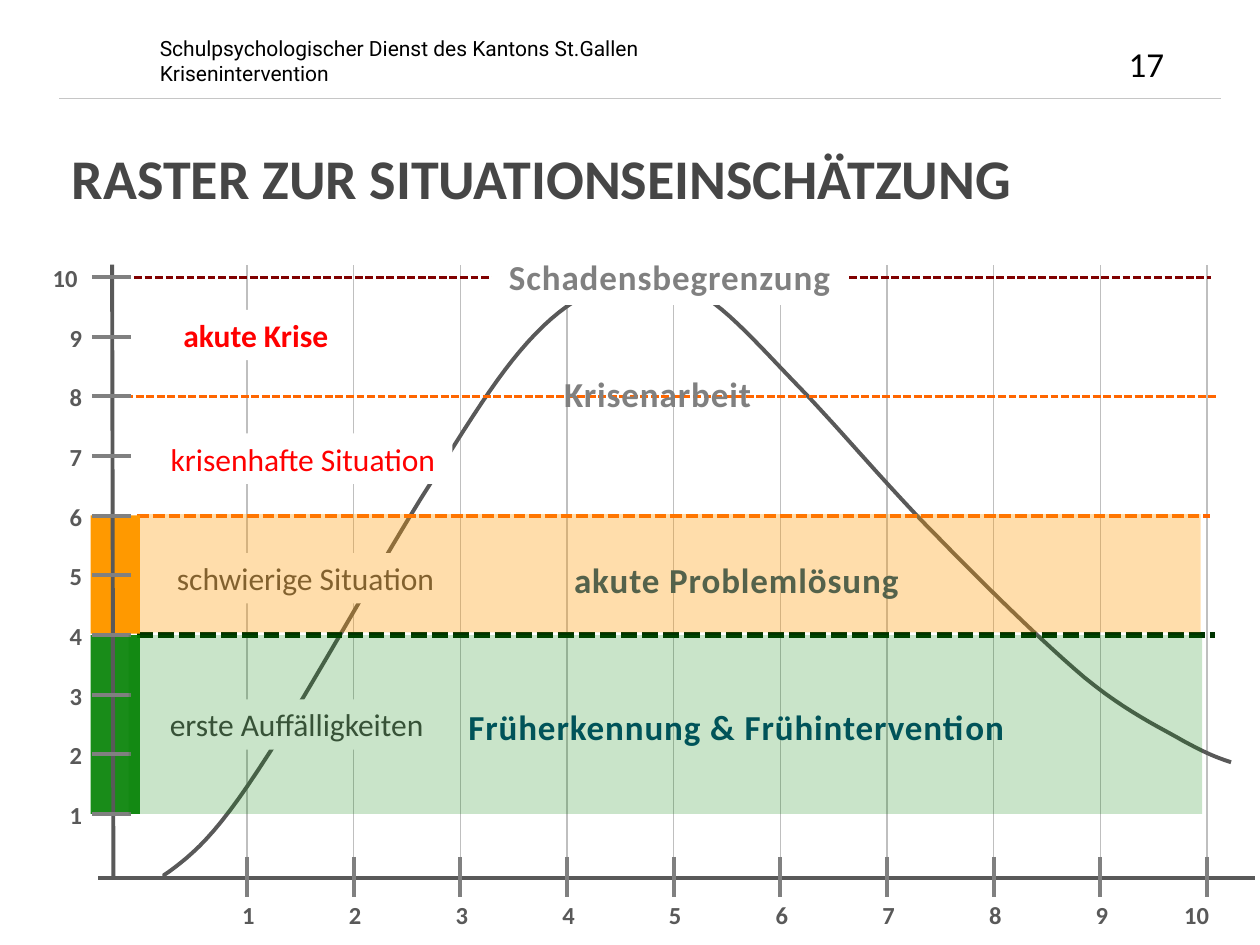
from dataclasses import dataclass

from lxml import etree
from pptx import Presentation
from pptx.dml.color import RGBColor
from pptx.enum.dml import MSO_LINE
from pptx.enum.shapes import MSO_CONNECTOR, MSO_SHAPE
from pptx.enum.text import MSO_ANCHOR, MSO_AUTO_SIZE, PP_ALIGN
from pptx.oxml.ns import qn
from pptx.util import Inches, Pt

STRAIGHT = MSO_CONNECTOR.STRAIGHT
RECTANGLE = MSO_SHAPE.RECTANGLE
DASH = MSO_LINE.SQUARE_DOT
LEFT, CENTER, RIGHT = PP_ALIGN.LEFT, PP_ALIGN.CENTER, PP_ALIGN.RIGHT
TOP = MSO_ANCHOR.TOP
FIXED = MSO_AUTO_SIZE.NONE


@dataclass(frozen=True)
class Theme:
    font: str = "Calibri"
    header_font: str = "Roboto"
    title_size: int = 32
    phase_size: int = 20
    situation_size: int = 18
    axis_size: int = 14
    header_size: int = 12
    black: str = "000000"
    white: str = "FFFFFF"
    rule: str = "111111"
    text: str = "464646"
    axis: str = "595959"
    tick: str = "808080"
    grid: str = "BFBFBF"
    red: str = "FF0000"
    dark_red: str = "800000"
    orange: str = "FF9900"
    deep_orange: str = "FF6600"
    green: str = "008000"
    dark_green: str = "003300"
    blue: str = "004771"


THEME = Theme()


@dataclass(frozen=True)
class Box:
    left: float
    top: float
    width: float
    height: float

    def inner(self, left, top, width, height):
        return Box(self.left + left, self.top + top, width, height)

    def lengths(self):
        return [Inches(v) for v in (self.left, self.top, self.width, self.height)]


class Plot(Box):
    """Chart area whose two scales both run from 1 to 10."""

    def x(self, value):
        return self.left + 1.06 + (value - 1) * 7.62 / 9

    def y(self, value):
        return self.top + 0.1 + (10 - value) * 4.26 / 9


# Start point, then two control points and an end point for each arc
CURVE = [
    (0.02, 4.83),
    (0.14, 4.89), (0.25, 4.96), (0.44, 4.82),
    (0.63, 4.68), (0.81, 4.53), (1.15, 4.01),
    (1.5, 3.49), (2.17, 2.27), (2.54, 1.7),
    (2.9, 1.12), (3.1, 0.81), (3.35, 0.55),
    (3.6, 0.29), (3.83, 0.18), (4.04, 0.12),
    (4.26, 0.07), (4.42, 0.08), (4.65, 0.23),
    (4.89, 0.37), (5.13, 0.65), (5.45, 0.98),
    (5.76, 1.3), (6.17, 1.79), (6.55, 2.17),
    (6.93, 2.56), (7.39, 3.01), (7.71, 3.28),
    (8.04, 3.55), (8.3, 3.67), (8.49, 3.78),
    (8.69, 3.89), (8.78, 3.92), (8.87, 3.95),
]


def set_alpha(fill_parent, percent):
    color = next(fill_parent.iter(qn("a:srgbClr")))
    etree.SubElement(color, qn("a:alpha")).set("val", str(percent * 1000))


def add_line(page, x1, y1, x2, y2, color, width, dash=None):
    line = page.shapes.add_connector(STRAIGHT, Inches(x1), Inches(y1), Inches(x2), Inches(y2))
    line.line.color.rgb = RGBColor.from_string(color)
    line.line.width = Pt(width)
    if dash:
        line.line.dash_style = dash
    etree.SubElement(line._element.spPr, qn("a:effectLst"))
    return line


def add_rect(page, box, color, alpha=100):
    rect = page.shapes.add_shape(RECTANGLE, *box.lengths())
    rect.shadow.inherit = False
    rect.fill.solid()
    rect.fill.fore_color.rgb = RGBColor.from_string(color)
    rect.line.fill.background()
    if alpha < 100:
        set_alpha(rect._element.spPr, alpha)
    return rect


def write(shape, lines, size, color, bold=False, align=LEFT, font=THEME.font, spacing=0):
    frame = shape.text_frame
    frame.word_wrap = True
    frame.auto_size = FIXED
    frame.vertical_anchor = TOP
    for index, text in enumerate(lines):
        para = frame.add_paragraph() if index else frame.paragraphs[0]
        para.alignment = align
        span = para.add_run()
        span.text = text
        span.font.name = font
        span.font.size = Pt(size)
        span.font.bold = bold
        span.font.color.rgb = RGBColor.from_string(color)
        if spacing:
            span.font._element.set("spc", str(spacing))


def add_text(page, box, *args, **style):
    write(page.shapes.add_textbox(*box.lengths()), *args, **style)


def draw_header(page, box):
    bottom = box.top + box.height
    rule = add_line(page, box.left, bottom, box.left + box.width, bottom, THEME.rule, 0.25)
    set_alpha(rule._element.spPr, 68)
    add_text(page, box.inner(0.7, 0, 7.6, 0.5),
             ["Schulpsychologischer Dienst des Kantons St.Gallen", "Krisenintervention"],
             THEME.header_size, THEME.black, font=THEME.header_font)
    add_text(page, box.inner(8.39, 0.06, 0.79, 0.44), ["17"], THEME.phase_size, THEME.black)


def draw_title(page, box):
    title = page.shapes.title
    title.left, title.top, title.width, title.height = box.lengths()
    write(title, ["RASTER ZUR SITUATIONSEINSCHÄTZUNG"], THEME.title_size, THEME.text, bold=True)


def draw_grid(page, plot):
    for value in range(1, 11):
        add_line(page, plot.x(value), plot.top + 4.88, plot.x(value), plot.top, THEME.grid, 0.75)


def draw_curve(page, plot, steps=12):
    points = []
    for i in range(0, len(CURVE) - 1, 3):
        arc = CURVE[i:i + 4]
        for step in range(1, steps + 1):
            t = step / steps
            weights = ((1 - t) ** 3, 3 * t * (1 - t) ** 2, 3 * t * t * (1 - t), t ** 3)
            x, y = (sum(w * p[axis] for w, p in zip(weights, arc)) for axis in (0, 1))
            points.append((Inches(plot.left + x), Inches(plot.top + y)))
    x, y = CURVE[0]
    builder = page.shapes.build_freeform(Inches(plot.left + x), Inches(plot.top + y))
    builder.add_line_segments(points, close=False)
    curve = builder.convert_to_shape()
    curve.shadow.inherit = False
    curve.fill.background()
    curve.line.color.rgb = RGBColor.from_string(THEME.axis)
    curve.line.width = Pt(2.25)


def draw_thresholds(page, plot):
    for value, start, end, color, width in [
        (6, 0.19, 8.7, THEME.deep_orange, 2.25),
        (10, 0.08, 8.71, THEME.dark_red, 1.5),
        (8, 0.01, 8.75, THEME.deep_orange, 1.5),
        (4, 0.19, 8.74, THEME.dark_green, 3),
    ]:
        y = plot.y(value)
        add_line(page, plot.left + start, y, plot.left + end, y, color, width, DASH)


def draw_situations(page, plot):
    for text, left, top, width, color, bold in [
        ("akute Krise", 0.42, 0.36, 1.42, THEME.red, True),
        ("krisenhafte Situation", 0.32, 1.34, 2.37, THEME.red, False),
        ("schwierige Situation", 0.34, 2.29, 2.37, THEME.text, False),
        ("erste Auffälligkeiten", 0.27, 3.45, 2.37, THEME.text, False),
    ]:
        label = add_rect(page, plot.inner(left, top, width, 0.4), THEME.white)
        write(label, [text], THEME.situation_size, color, bold, CENTER)


def draw_phases(page, plot):
    style = dict(bold=True, align=CENTER, spacing=50)
    label = add_rect(page, plot.inner(3, -0.12, 2.83, 0.44), THEME.white)
    write(label, ["Schadensbegrenzung"], THEME.phase_size, THEME.tick, **style)
    for text, left, top, width, color in [
        ("Krisenarbeit", 2.67, 0.81, 3.3, THEME.tick),
        ("akute Problemlösung", 1.99, 2.28, 5.91, THEME.blue),
        ("Früherkennung & Frühintervention", 1.99, 3.45, 5.91, THEME.blue),
    ]:
        add_text(page, plot.inner(left, top, width, 0.44), [text],
                 THEME.phase_size, color, **style)


def draw_axis_label(page, box, value):
    add_text(page, box, [str(value)], THEME.axis_size, THEME.axis, bold=True,
             align=LEFT if value == 10 else RIGHT)


def draw_axes(page, plot):
    base = plot.top + plot.height
    add_rect(page, plot.inner(-0.04, 4.7, 0.43, 0.39), THEME.white)
    add_line(page, plot.left - 0.12, base, plot.left + 9.06, base, THEME.axis, 2.25)
    add_rect(page, plot.inner(-0.18, 1.99, 0.39, 0.94), THEME.orange)
    add_rect(page, plot.inner(-0.18, 2.94, 0.39, 1.42), THEME.green, 90)
    add_line(page, plot.left, base, plot.left - 0.01, plot.top, THEME.axis, 2.25)
    for value in range(1, 11):
        y = plot.y(value)
        add_line(page, plot.left - 0.17, y, plot.left + 0.14, y, THEME.tick, 2.25)
        draw_axis_label(page, Box(plot.left - 0.58, y - 0.16, 0.43, 0.34), value)


def draw_bands(page, plot):
    add_rect(page, plot.inner(0.19, 1.98, 8.44, 0.94), THEME.orange, 33)
    add_rect(page, plot.inner(0.12, 2.94, 8.52, 1.42), THEME.green, 21)


def draw_x_scale(page, plot):
    base = plot.top + plot.height
    for value in range(1, 11):
        x = plot.x(value)
        add_line(page, x, base - 0.17, x, base + 0.15, THEME.tick, 2.25)
        draw_axis_label(page, Box(x - 0.28, base + 0.12, 0.44, 0.34), value)


def main():
    deck = Presentation()
    deck.slide_width, deck.slide_height = Inches(10), Inches(7.5)
    page = deck.slides.add_slide(deck.slide_layouts.get_by_name("Title Only"))
    draw_header(page, Box(0.47, 0.23, 9.22, 0.55))
    draw_title(page, Box(0.47, 1.09, 8.86, 0.55))
    plot = Plot(0.9, 2.1, 8.68, 4.87)
    for draw in (draw_grid, draw_curve, draw_thresholds, draw_situations, draw_phases,
                 draw_axes, draw_bands, draw_x_scale):
        draw(page, plot)
    deck.save("out.pptx")


if __name__ == "__main__":
    main()
